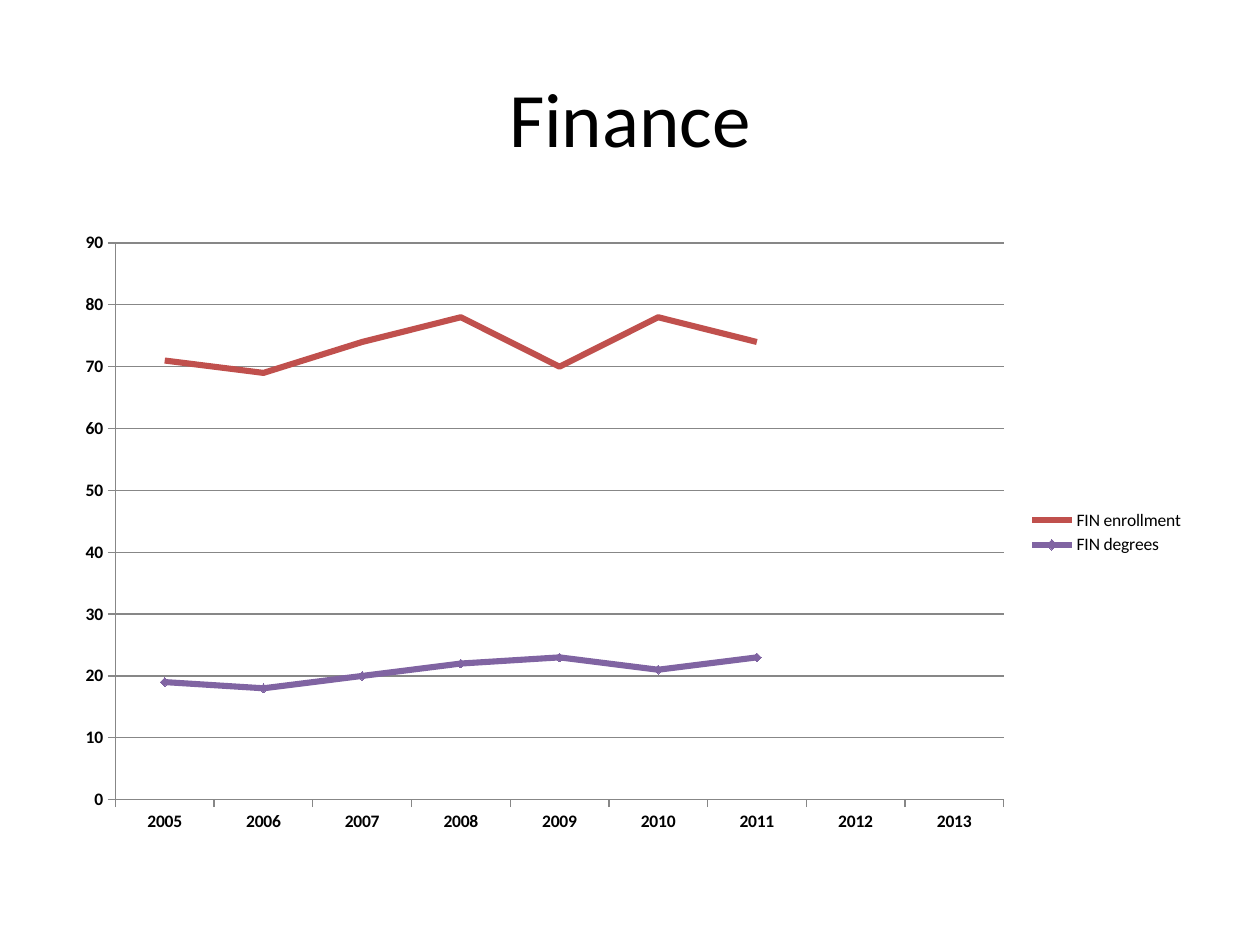
"""Build a slide with a line chart of finance enrollment and degrees."""
from pptx import Presentation
from pptx.chart.data import CategoryChartData
from pptx.dml.color import RGBColor
from pptx.enum.chart import XL_CHART_TYPE, XL_LEGEND_POSITION, XL_MARKER_STYLE, XL_TICK_MARK
from pptx.enum.text import MSO_ANCHOR, PP_ALIGN
from pptx.util import Cm, Pt

LINE_CHART = XL_CHART_TYPE.LINE_MARKERS
RIGHT = XL_LEGEND_POSITION.RIGHT
NO_MARKER = XL_MARKER_STYLE.NONE
DIAMOND = XL_MARKER_STYLE.DIAMOND
OUTSIDE = XL_TICK_MARK.OUTSIDE
MIDDLE = MSO_ANCHOR.MIDDLE
CENTER = PP_ALIGN.CENTER
FONT = "Calibri"
BLACK = "000000"
GRAY = "878787"
SERIES = [
    ("FIN enrollment", [71, 69, 74, 78, 70, 78, 74, None, None], "C0504D", NO_MARKER),
    ("FIN degrees ", [19, 18, 20, 22, 23, 21, 23, None, None], "8064A2", DIAMOND),
]


def color(hex_string):
    """Return the colour for a hex string."""
    return RGBColor.from_string(hex_string)


def style_font(font, size, bold=False):
    """Apply the slide's typeface and text colour."""
    font.name = FONT
    font.size = Pt(size)
    font.bold = bold
    font.color.rgb = color(BLACK)


presentation = Presentation()
presentation.slide_width = Cm(25.4)
presentation.slide_height = Cm(19.05)
slide = presentation.slides.add_slide(presentation.slide_layouts[5])

title = slide.shapes.title
title.left, title.top, title.width, title.height = Cm(1.27), Cm(0.76), Cm(22.86), Cm(3.18)
title.text_frame.vertical_anchor = MIDDLE
paragraph = title.text_frame.paragraphs[0]
paragraph.alignment = CENTER
run = paragraph.add_run()
run.text = "Finance"
style_font(run.font, 44)

chart_data = CategoryChartData()
chart_data.categories = [str(year) for year in range(2005, 2014)]
for name, values, _, _ in SERIES:
    chart_data.add_series(name, values)
chart = slide.shapes.add_chart(
    LINE_CHART, Cm(1.27), Cm(4.45), Cm(22.86), Cm(12.57), chart_data
).chart
style_font(chart.font, 10)
chart.has_title = False
chart.has_legend = True
chart.legend.position = RIGHT
chart.legend.include_in_layout = False
style_font(chart.legend.font, 10)

for axis in (chart.category_axis, chart.value_axis):
    axis.major_tick_mark = OUTSIDE
    axis.format.line.color.rgb = color(GRAY)
    axis.format.line.width = Pt(0.75)
    style_font(axis.tick_labels.font, 10, bold=True)

value_axis = chart.value_axis
value_axis.minimum_scale = 0
value_axis.maximum_scale = 90
value_axis.major_unit = 10
value_axis.has_major_gridlines = True
value_axis.major_gridlines.format.line.color.rgb = color(GRAY)
value_axis.major_gridlines.format.line.width = Pt(0.75)

chart.plots[0].vary_by_categories = False
for series, (_, _, series_color, marker_style) in zip(chart.plots[0].series, SERIES):
    series.smooth = False
    series.format.line.color.rgb = color(series_color)
    series.format.line.width = Pt(3.5)
    series.marker.style = marker_style
    if marker_style == DIAMOND:
        series.marker.size = 5
        series.marker.format.fill.solid()
        series.marker.format.fill.fore_color.rgb = color(series_color)
        series.marker.format.line.color.rgb = color(series_color)

presentation.save("out.pptx")
